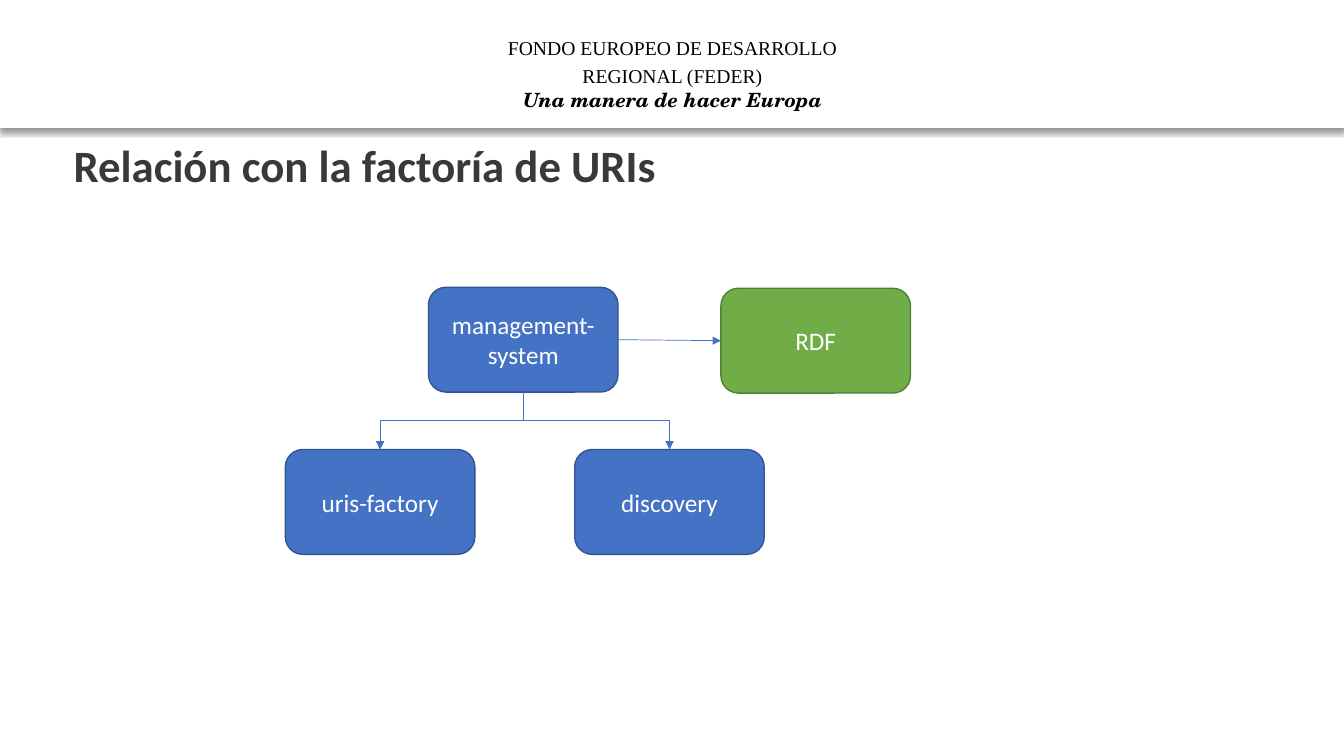
import pptx
import pptx.util
import pptx.dml.color
import pptx.enum.shapes
import pptx.enum.text
import pptx.oxml
import pptx.oxml.ns

Inches, Pt = pptx.util.Inches, pptx.util.Pt
KIND = pptx.enum.shapes.MSO_SHAPE
LINK = pptx.enum.shapes.MSO_CONNECTOR
ALIGN = pptx.enum.text.PP_ALIGN
ANCHOR = pptx.enum.text.MSO_ANCHOR
FIT = pptx.enum.text.MSO_AUTO_SIZE
BLUE, GREEN, WHITE = "4472C4", "70AD47", "FFFFFF"
TOP, LEFT, RIGHT, BOTTOM = 0, 1, 3, 2


def color(code):
    return pptx.dml.color.RGBColor.from_string(code)


def add(parent, tag, **attrs):
    item = pptx.oxml.ns.qn(tag)
    node = parent.makeelement(item, {k: str(v) for k, v in attrs.items()})
    parent.append(node)
    return node


class Deck:
    font = "Calibri"
    size = (1.88, 1.04)

    def __init__(self):
        self.file = pptx.Presentation()
        self.file.slide_width = Inches(13.33)
        self.file.slide_height = Inches(7.5)
        self.slide = self.file.slides.add_slide(self.file.slide_layouts[5])
        self.shapes = self.slide.shapes

    def run(self, para, text, size, code, font=None, bold=False, slant=False):
        run = para.add_run()
        run.text = text
        run.font.name = font or self.font
        run.font.size = Pt(size)
        run.font.bold = bold
        run.font.italic = slant
        run.font.color.rgb = color(code)

    def title(self, text, *at):
        box = self.shapes.title
        box.left, box.top, box.width, box.height = map(Inches, at)
        frame = box.text_frame
        frame.word_wrap = True
        frame.auto_size = FIT.NONE
        frame.vertical_anchor = ANCHOR.TOP
        para = frame.paragraphs[0]
        para.alignment = ALIGN.LEFT
        para.line_spacing = 0.9
        self.run(para, text, 32, "3B3838", bold=True)

    def shape(self, kind, at, fill, line):
        shape = self.shapes.add_shape(kind, *map(Inches, at))
        shape.shadow.inherit = False
        shape.fill.solid()
        shape.fill.fore_color.rgb = color(fill)
        shape.line.color.rgb = color(line)
        shape.line.width = Pt(1)
        return shape

    def band(self, *at):
        band = self.shape(KIND.RECTANGLE, at, WHITE, WHITE)
        glow = band._element.spPr.find(pptx.oxml.ns.qn("a:effectLst"))
        shade = add(glow, "a:outerShdw", blurRad=Pt(4), dist=Pt(3),
                    dir=5400000, algn="t", rotWithShape=0)
        add(add(shade, "a:srgbClr", val="000000"), "a:alpha", val=40000)

    def head(self, first, second, *at):
        frame = self.shapes.add_textbox(*map(Inches, at)).text_frame
        frame.word_wrap = True
        frame.auto_size = FIT.SHAPE_TO_FIT_TEXT
        para = frame.paragraphs[0]
        para.line_spacing = 1.2
        self.run(para, first, 14, "000000", "Times New Roman")
        last = frame.add_paragraph()
        self.run(last, second, 14, "000000", "TeX Gyre Schola", True, True)
        para.alignment = last.alignment = ALIGN.CENTER

    def node(self, text, left, top, fill=BLUE, line="325491"):
        node = self.shape(KIND.ROUNDED_RECTANGLE, (left, top, *self.size),
                          fill, line)
        frame = node.text_frame
        frame.word_wrap = True
        frame.vertical_anchor = ANCHOR.MIDDLE
        para = frame.paragraphs[0]
        para.alignment = ALIGN.CENTER
        self.run(para, text, 18, WHITE)
        return node

    def link(self, kind, start, side, end, goal):
        link = self.shapes.add_connector(kind, 0, 0, 0, 0)
        link.begin_connect(start, side)
        link.end_connect(end, goal)
        link.line.color.rgb = color(BLUE)
        link.line.width = Pt(0.5)
        add(link.line._get_or_add_ln(), "a:tailEnd", type="triangle")
        add(link._element.spPr, "a:effectLst")
        return link

    def arrow(self, start, end):
        self.link(LINK.STRAIGHT, start, RIGHT, end, LEFT)

    def branch(self, start, end):
        link = self.link(LINK.ELBOW, start, BOTTOM, end, TOP)
        # Turn the elbow so that it leaves downwards
        x1, y1, x2, y2 = link.begin_x, link.begin_y, link.end_x, link.end_y
        wide, high = y2 - y1, abs(x2 - x1)
        link.left, link.top = (x1 + x2 - wide) // 2, (y1 + y2 - high) // 2
        link.width, link.height = wide, high
        frame = link._element.spPr.find(pptx.oxml.ns.qn("a:xfrm"))
        right = x2 > x1
        frame.set("rot", str((270 if right else 90) * 60000))
        frame.set("flipH", "1" if right else "0")
        frame.set("flipV", "0")


def main():
    deck = Deck()

    # Header band
    deck.band(0, 0, 13.33, 1.26)
    deck.head("FONDO EUROPEO DE DESARROLLO REGIONAL (FEDER)",
              "Una manera de hacer Europa", 4.46, 0.26, 4.42, 0.9)

    # Title
    deck.title("Relación con la factoría de URIs", 0.63, 1.38, 12.05, 0.65)

    # Modules
    system = deck.node("management-system", 4.25, 2.85)
    store = deck.node("RDF", 7.15, 2.86, GREEN, "538035")
    parts = [deck.node(text, left, 4.46)
             for text, left in (("uris-factory", 2.83), ("discovery", 5.7))]

    # Links
    deck.arrow(system, store)
    for part in parts:
        deck.branch(system, part)

    deck.file.save("out.pptx")


if __name__ == "__main__":
    main()
